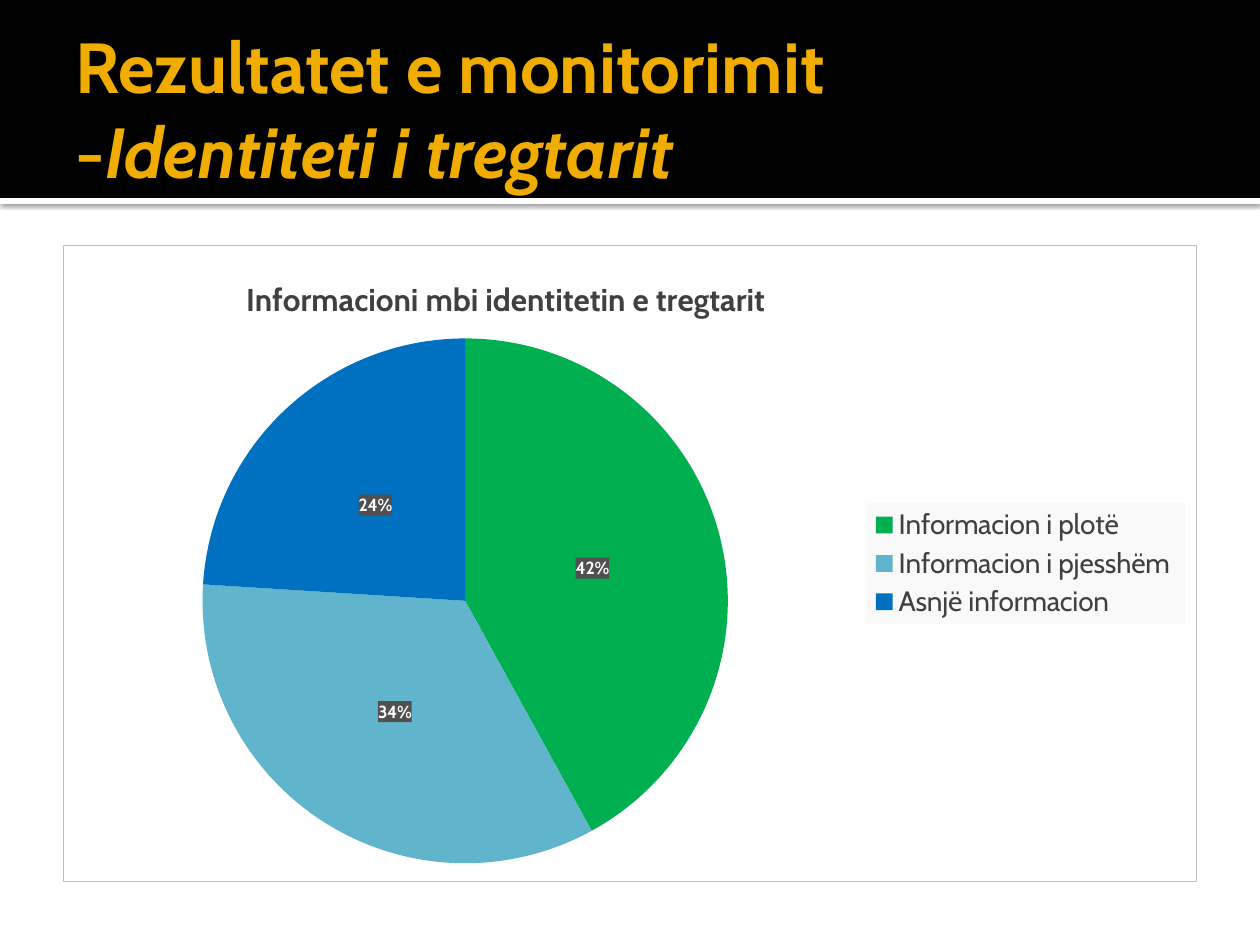
from dataclasses import dataclass

from pptx import Presentation
from pptx import util as u
from pptx.chart.data import CategoryChartData
from pptx.dml.color import RGBColor
from pptx.enum import chart as ch, shapes, text
from pptx.oxml import parse_xml
from pptx.oxml.ns import nsdecls, qn

EMU_PER_PX = 914400 / 126


@dataclass(frozen=True)
class Theme:
    font: str = "Cabin"
    band: str = "000000"
    paper: str = "FFFFFF"
    gold: str = "F0AD00"
    ink: str = "404040"
    border: str = "BFBFBF"
    legend_fill: str = "F9F9F9"
    label_fill: str = "505050"
    slices: tuple = ("00B050", "60B5CC", "0070C0")
    title_size: float = 40.5
    chart_title_size: int = 18
    legend_size: int = 16
    label_size: int = 10


THEME = Theme()
CHART_BOX = (63, 245, 1134, 637)
SHARES = {
    "Informacion i plotë": 42,
    "Informacion i pjesshëm ": 34,
    "Asnjë informacion": 24,
}


def px(*lengths):
    return [u.Emu(round(length * EMU_PER_PX)) for length in lengths]


def style_font(font, size, color, bold=False):
    font.name = THEME.font
    font.size = u.Pt(size)
    font.bold = bold
    font.color.rgb = RGBColor.from_string(color)


def add_band(slide, box, color):
    band = slide.shapes.add_shape(shapes.MSO_SHAPE.RECTANGLE, *px(*box))
    band.shadow.inherit = False
    band.fill.solid()
    band.fill.fore_color.rgb = RGBColor.from_string(color)
    band.line.fill.background()
    return band


def add_shadow(shape):
    effects = shape._element.spPr.find(qn("a:effectLst"))
    effects.append(parse_xml(
        f'<a:outerShdw {nsdecls("a")} blurRad="{u.Pt(2.5)}" dist="{u.Pt(0.8)}" '
        'dir="5400000" algn="tl" rotWithShape="0"><a:srgbClr val="000000">'
        '<a:alpha val="60000"/></a:srgbClr></a:outerShdw>'))


def add_title(slide):
    box = slide.shapes.add_textbox(*px(63, 21, 1134, 173))
    frame = box.text_frame
    frame.word_wrap = True
    frame.vertical_anchor = text.MSO_ANCHOR.MIDDLE
    frame.margin_left = u.Inches(0.1)
    frame.margin_right = frame.margin_top = frame.margin_bottom = u.Inches(0.05)
    para = frame.paragraphs[0]
    style_font(para.font, THEME.title_size, THEME.gold, bold=True)
    para.add_run().text = "Rezultatet e monitorimit"
    para.add_line_break()
    para.add_run().text = "-"
    span = para.add_run()
    span.text = "Identiteti i tregtarit"
    span.font.italic = True


def fill_part(element, color, border=None):
    """Fill a chart part that already has its text properties."""
    line = (f'<a:ln w="{u.Pt(0.75)}"><a:solidFill><a:srgbClr val="{border}"/>'
            '</a:solidFill></a:ln>' if border else '<a:ln><a:noFill/></a:ln>')
    element.find(qn("c:txPr")).addprevious(parse_xml(
        f'<c:spPr {nsdecls("c", "a")}><a:solidFill><a:srgbClr val="{color}"/>'
        f'</a:solidFill>{line}</c:spPr>'))


def place_part(element, left, top, width=None, height=None, inner=False):
    """Place a chart part by its slide position in px."""
    chart_left, chart_top, chart_width, chart_height = CHART_BOX
    places = {"x": (left - chart_left) / chart_width,
              "y": (top - chart_top) / chart_height}
    if width:
        places |= {"w": width / chart_width, "h": height / chart_height}
    target = '<c:layoutTarget val="inner"/>' if inner else ""
    modes = '<c:xMode val="edge"/><c:yMode val="edge"/>'
    values = "".join(f'<c:{key} val="{value:.4f}"/>' for key, value in places.items())
    layout = parse_xml(f'<c:layout {nsdecls("c")}><c:manualLayout>{target}{modes}'
                       f'{values}</c:manualLayout></c:layout>')
    for old in element.findall(qn("c:layout")):
        element.remove(old)
    overlay = element.find(qn("c:overlay"))
    if overlay is None:
        element.insert(0, layout)
    else:
        overlay.addprevious(layout)


def add_chart_title(chart):
    title = chart.chart_title
    para = title.text_frame.paragraphs[0]
    para.text = "Informacioni mbi identitetin e tregtarit"
    style_font(para.font, THEME.chart_title_size, THEME.ink, bold=True)
    place_part(title._element, 240, 271)


def add_legend(chart):
    chart.has_legend = True
    legend = chart.legend
    legend.position = ch.XL_LEGEND_POSITION.RIGHT
    legend.include_in_layout = False
    style_font(legend.font, THEME.legend_size, THEME.ink)
    fill_part(legend._element, THEME.legend_fill)
    place_part(legend._element, 867, 503, 319, 121)


def style_slices(plot):
    plot.vary_by_categories = True
    for index, color in enumerate(THEME.slices):
        point = plot.series[0].points[index].format
        point.fill.solid()
        point.fill.fore_color.rgb = RGBColor.from_string(color)
        point.line.fill.background()


def add_labels(plot):
    labels = plot.series[0].data_labels
    labels.show_percentage = True
    labels.show_value = False
    labels.number_format = "0%"
    labels.number_format_is_linked = False
    labels.position = ch.XL_LABEL_POSITION.CENTER
    style_font(labels.font, THEME.label_size, THEME.paper, bold=True)
    fill_part(labels._element, THEME.label_fill)


def add_pie(slide):
    data = CategoryChartData()
    data.categories = list(SHARES)
    data.add_series("Series 1", list(SHARES.values()))
    chart = slide.shapes.add_chart(ch.XL_CHART_TYPE.PIE, *px(*CHART_BOX), data).chart
    style_font(chart.font, THEME.label_size, THEME.band)
    fill_part(chart._chartSpace, THEME.paper, THEME.border)
    add_chart_title(chart)
    add_legend(chart)
    plot = chart.plots[0]
    style_slices(plot)
    add_labels(plot)
    place_part(chart._chartSpace.chart.plotArea, 202, 338, 526, 526, inner=True)


def main():
    deck = Presentation()
    deck.slide_width, deck.slide_height = px(1260, 945)
    slide = deck.slides.add_slide(deck.slide_layouts[6])
    add_shadow(add_band(slide, (0, 198, 1260, 6), THEME.paper))
    add_band(slide, (0, 0, 1260, 198), THEME.band)
    add_title(slide)
    add_pie(slide)
    deck.save("out.pptx")


if __name__ == "__main__":
    main()
